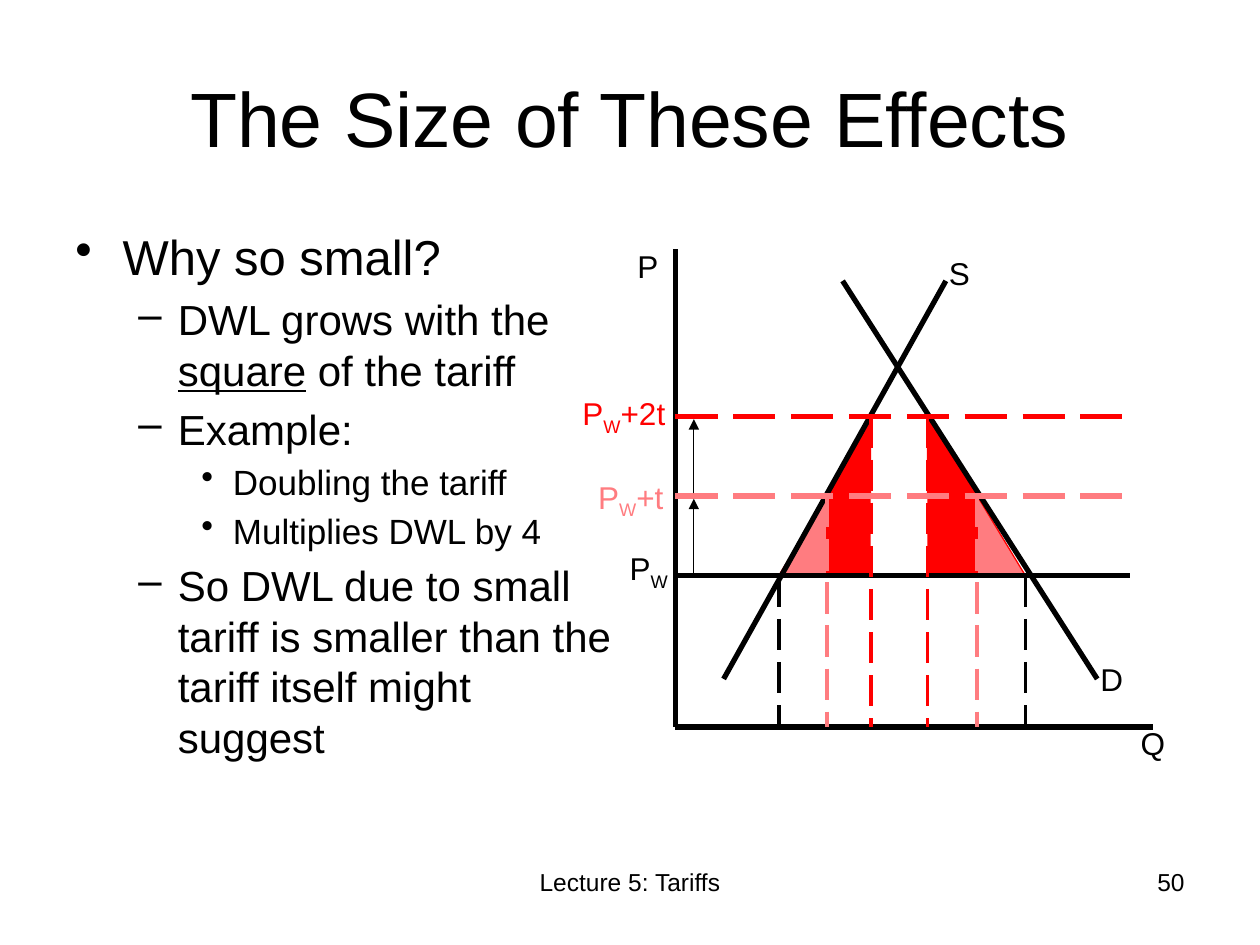
from dataclasses import dataclass

from lxml import etree
from pptx import Presentation
from pptx import util as u
from pptx.dml.color import RGBColor
from pptx.enum import dml, shapes, text
from pptx.oxml import ns

Pt = u.Pt


@dataclass(frozen=True)
class Theme:
    font: str = "Arial"
    black: str = "000000"
    red: str = "FF0000"
    pink: str = "FF7C80"
    title: int = 44
    levels: tuple = (28, 24, 20)
    label: int = 18
    footer: int = 14
    thick: float = 3
    medium: float = 2.25
    thin: float = 0.75


THEME = Theme()
BULLETS = "•–•"
INDENTS = ((27, -27), (58.5, -22.5), (90, -18))

AXIS_X, AXIS_TOP, AXIS_Y, AXIS_END = 386, 142.5, 415.5, 659
PRICE_END = 646
PRICE, PRICE_T, PRICE_2T = 329, 283.5, 238
SUPPLY = (445, 472.5, 497.5)
DEMAND = (586, 558.5, 530)
ARROW_X = 396.5


def style(font, size, colour):
    font.name = THEME.font
    font.size = Pt(size)
    font.color.rgb = RGBColor.from_string(colour)


def add_text(page, left, top, width, height, spans, size, colour=THEME.black,
             align=text.PP_ALIGN.LEFT, anchor=text.MSO_ANCHOR.TOP, margins=(7.2, 3.6)):
    box = page.shapes.add_textbox(Pt(left), Pt(top), Pt(width), Pt(height))
    frame = box.text_frame
    frame.word_wrap = True
    frame.vertical_anchor = anchor
    frame.margin_left = frame.margin_right = Pt(margins[0])
    frame.margin_top = frame.margin_bottom = Pt(margins[1])
    para = frame.paragraphs[0]
    para.alignment = align
    style(para.font, size, colour)
    for words, baseline in spans:
        span = para.add_run()
        span.text = words
        if baseline:
            span._r.get_or_add_rPr().set("baseline", str(baseline * 1000))


def add_label(page, left, top, width, name, subscript="", suffix="", colour=THEME.black):
    parts = ((name, 0), (subscript, -25), (suffix, 0))
    spans = [part for part in parts if part[0]]
    add_text(page, left, top, width, 26, spans, THEME.label, colour, margins=(5.75, 2.9))


def add_outline(page, items):
    box = page.shapes.add_textbox(Pt(36), Pt(126), Pt(322.5), Pt(356.5))
    frame = box.text_frame
    frame.word_wrap = True
    for index, (level, spans) in enumerate(items):
        para = frame.add_paragraph() if index else frame.paragraphs[0]
        size = THEME.levels[level]
        para.level = level
        para.space_before = Pt(size * 0.2)
        style(para.font, size, THEME.black)
        props = para._p.get_or_add_pPr()
        margin, indent = INDENTS[level]
        props.set("marL", str(Pt(margin)))
        props.set("indent", str(Pt(indent)))
        bullet = etree.Element(ns.qn("a:buChar"), char=BULLETS[level])
        props.find(ns.qn("a:spcBef")).addnext(bullet)
        for words, underlined in spans:
            span = para.add_run()
            span.text = words
            if underlined:
                span.font.underline = True


def add_line(page, start, end, colour, width, dashed=False, arrow=False):
    line = page.shapes.add_connector(
        shapes.MSO_CONNECTOR.STRAIGHT, *(Pt(value) for value in (*start, *end)))
    line.line.color.rgb = RGBColor.from_string(colour)
    line.line.width = Pt(width)
    if dashed:
        line.line.dash_style = dml.MSO_LINE.LONG_DASH
    if arrow:
        etree.SubElement(line.line._get_or_add_ln(), ns.qn("a:tailEnd"), type="triangle")
    etree.SubElement(line._element.spPr, ns.qn("a:effectLst"))


def add_block(page, left, right):
    block = page.shapes.add_shape(shapes.MSO_SHAPE.RECTANGLE, Pt(left), Pt(PRICE_T),
                                  Pt(right - left), Pt(PRICE - PRICE_T))
    block.shadow.inherit = False
    block.fill.solid()
    block.fill.fore_color.rgb = RGBColor.from_string(THEME.red)
    block.line.fill.background()


def add_triangle(page, inner, outer, top, bottom, colour):
    builder = page.shapes.build_freeform(Pt(inner), Pt(top))
    builder.add_line_segments([(Pt(inner), Pt(bottom)), (Pt(outer), Pt(bottom))], close=True)
    triangle = builder.convert_to_shape()
    triangle.shadow.inherit = False
    triangle.fill.solid()
    triangle.fill.fore_color.rgb = RGBColor.from_string(colour)
    triangle.line.color.rgb = RGBColor.from_string(THEME.red)
    triangle.line.width = Pt(THEME.thin)


def add_losses(page):
    for outer, middle, inner in (SUPPLY, DEMAND):
        add_block(page, min(middle, inner), max(middle, inner))
        add_triangle(page, inner, middle, PRICE_2T, PRICE_T, THEME.red)
        add_triangle(page, middle, outer, PRICE_T, PRICE, THEME.pink)


def add_price(page, price, colour, dashed=True):
    add_line(page, (AXIS_X, price), (PRICE_END, price), colour, THEME.thick, dashed)


def add_quantities(page, step, price, colour):
    for side in (SUPPLY, DEMAND):
        add_line(page, (side[step], price), (side[step], AXIS_Y), colour, THEME.medium, True)


def add_diagram(page):
    add_losses(page)
    origin = (AXIS_X, AXIS_Y)
    for start, end in (((AXIS_X, AXIS_TOP), origin), (origin, (AXIS_END, AXIS_Y)),
                       ((540.5, 160.5), (413.5, 388)), ((481.5, 160.5), (627, 388))):
        add_line(page, start, end, THEME.black, THEME.thick)
    add_price(page, PRICE, THEME.black, dashed=False)
    add_quantities(page, 0, PRICE, THEME.black)
    add_price(page, PRICE_T, THEME.pink)
    add_quantities(page, 1, PRICE_T, THEME.pink)
    for low, high in ((PRICE, PRICE_T), (PRICE_T, PRICE_2T)):
        add_line(page, (ARROW_X, low - 1.5), (ARROW_X, high + 1.5),
                 THEME.black, THEME.thin, arrow=True)
    add_price(page, PRICE_2T, THEME.red)
    add_quantities(page, 2, PRICE_2T, THEME.red)

    add_label(page, 358.5, 138.5, 36.5, "P")
    add_label(page, 536.5, 142.5, 32, "S")
    add_label(page, 623, 374.5, 32, "D")
    add_label(page, 646, 411, 32, "Q")
    add_label(page, 354, 311, 37, "P", "W")
    add_label(page, 336, 270, 59, "P", "W", "+t", THEME.pink)
    add_label(page, 327, 222.5, 68.5, "P", "W", "+2t", THEME.red)


def main():
    deck = Presentation()
    deck.slide_width, deck.slide_height = Pt(720), Pt(540)
    page = deck.slides.add_slide(deck.slide_layouts[6])
    add_text(page, 36, 21.5, 648, 90, [("The Size of These Effects", 0)], THEME.title,
             align=text.PP_ALIGN.CENTER, anchor=text.MSO_ANCHOR.MIDDLE)
    add_outline(page, (
        (0, [("Why so small?", False)]),
        (1, [("DWL grows with the ", False), ("square", True), (" of the tariff", False)]),
        (1, [("Example:", False)]),
        (2, [("Doubling the tariff", False)]),
        (2, [("Multiplies DWL by 4", False)]),
        (1, [("So DWL due to small tariff is smaller than the tariff itself might suggest",
              False)]),
    ))
    add_diagram(page)
    add_text(page, 246, 492, 228, 37.5, [("Lecture 5: Tariffs", 0)], THEME.footer,
             align=text.PP_ALIGN.CENTER)
    add_text(page, 516, 492, 168, 37.5, [("50", 0)], THEME.footer,
             align=text.PP_ALIGN.RIGHT)
    deck.save("out.pptx")


if __name__ == "__main__":
    main()
